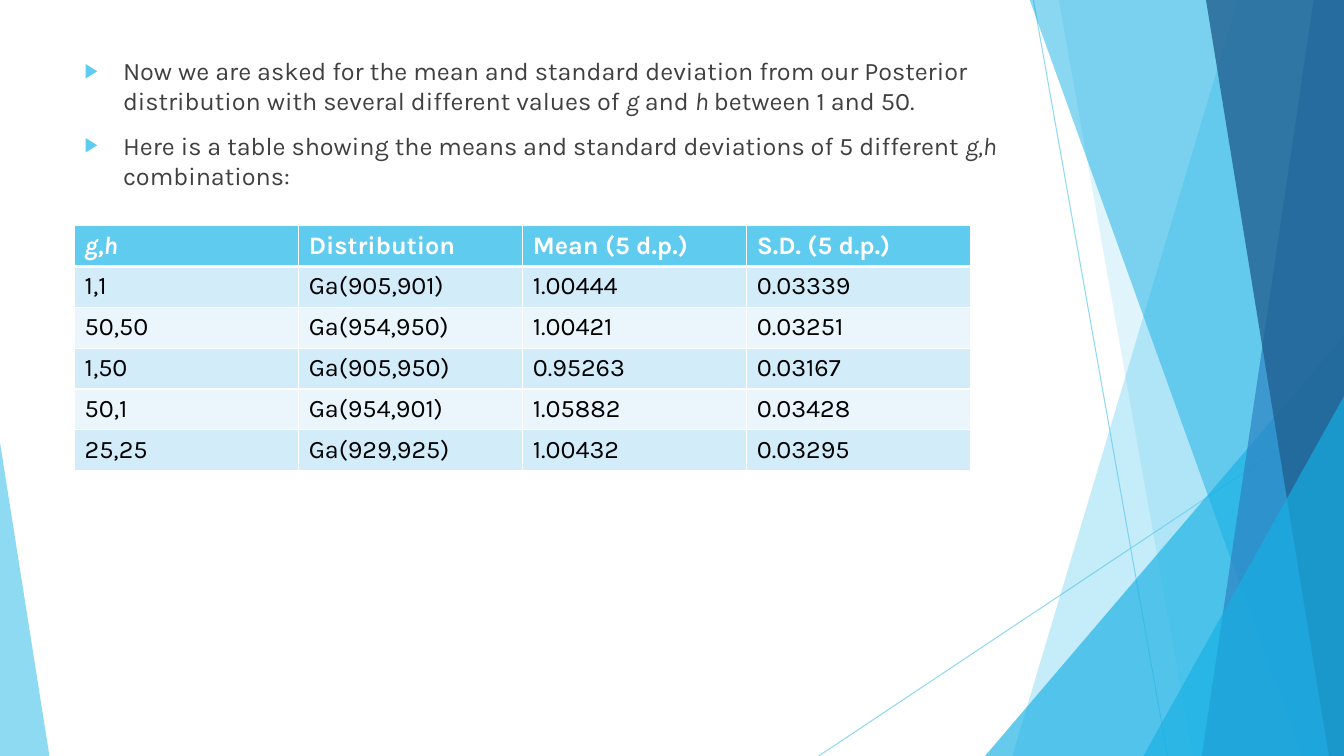
import pptx
import pptx.dml.color
import pptx.enum.shapes
import pptx.enum.text
import pptx.oxml
import pptx.oxml.ns
import pptx.util
from pptx.util import Inches

COLORS = {
    "sky": "5FCBEF", "cyan": "17B0E4", "blue": "2E83C3", "navy": "226292",
    "body": "404040", "white": "FFFFFF", "black": "000000",
    "band_dark": "D2ECF9", "band_light": "EAF6FC",
}
WIDTH, HEIGHT = 13.33, 7.5
NAMESPACE = 'xmlns:a="http://schemas.openxmlformats.org/drawingml/2006/main"'

BULLETS = [
    [("Now we are asked for the mean and standard deviation from our Posterior "
      "distribution with several different values of ", False),
     ("g", True), (" and ", False), ("h ", True), ("between 1 and 50.", False)],
    [("Here is a table showing the means and standard deviations of 5 different ", False),
     ("g,h", True), (" combinations:", False)],
]
RESULTS = [
    ["g,h", "Distribution", "Mean (5 d.p.)", "S.D. (5 d.p.)"],
    ["1,1", "Ga(905,901)", "1.00444", "0.03339"],
    ["50,50", "Ga(954,950)", "1.00421", "0.03251"],
    ["1,50", "Ga(905,950)", "0.95263", "0.03167"],
    ["50,1", "Ga(954,901)", "1.05882", "0.03428"],
    ["25,25", "Ga(929,925)", "1.00432", "0.03295"],
]


def rgb(name):
    return pptx.dml.color.RGBColor.from_string(COLORS[name])


def xml(markup):
    """Parse one DrawingML element written with the a: prefix."""
    tag, rest = markup.split(" ", 1)
    return pptx.oxml.parse_xml(f"{tag} {NAMESPACE} {rest}")


def set_opacity(shape, percent):
    for color in shape.element.iter(pptx.oxml.ns.qn("a:srgbClr")):
        color.append(xml(f'<a:alpha val="{percent * 1000}"/>'))


def add_text(paragraph, text, color="black", bold=False, italic=False):
    run = paragraph.add_run()
    run.text = text
    run.font.name = "Karla"
    run.font.size = pptx.util.Pt(18)
    run.font.bold = bold
    run.font.italic = italic
    run.font.color.rgb = rgb(color)


class FacetSlide:
    """A slide in the faceted blue style."""

    def __init__(self, presentation):
        self.slide = presentation.slides.add_slide(presentation.slide_layouts[1])
        self.shapes = self.slide.shapes
        title = self.shapes.title.element
        title.getparent().remove(title)

    def line(self, start, end):
        connector = self.shapes.add_connector(
            pptx.enum.shapes.MSO_CONNECTOR.STRAIGHT,
            *(Inches(value) for value in (*start, *end)))
        connector.line.width = pptx.util.Pt(0.75)
        connector.line.color.rgb = rgb("sky")
        set_opacity(connector, 70)
        connector.element.spPr.append(xml("<a:effectLst />"))

    def paint(self, shape, color, opacity):
        shape.shadow.inherit = False
        shape.line.fill.background()
        shape.fill.solid()
        shape.fill.fore_color.rgb = rgb(color)
        set_opacity(shape, opacity)

    def facet(self, top_x, bottom_x, color, opacity):
        """Fill the area between a slanted left edge and the slide's right edge."""
        top = -0.01
        corners = [(Inches(x), Inches(y)) for x, y in
                   ((top_x, top), (WIDTH, top), (WIDTH, HEIGHT), (bottom_x, HEIGHT))]
        builder = self.shapes.build_freeform(*corners[0], scale=1.0)
        builder.add_line_segments(corners[1:], close=True)
        self.paint(builder.convert_to_shape(), color, opacity)

    def triangle(self, left, top, width, apex, color, opacity):
        """Stand a triangle on the slide's bottom edge; apex is 0 (left) to 1 (right)."""
        shape = self.shapes.add_shape(
            pptx.enum.shapes.MSO_SHAPE.ISOSCELES_TRIANGLE,
            Inches(left), Inches(top), Inches(width), Inches(HEIGHT - top))
        shape.adjustments[0] = apex
        self.paint(shape, color, opacity)

    def bullets(self, items, left, top, width, height):
        body = self.slide.placeholders[1]
        body.left, body.top = Inches(left), Inches(top)
        body.width, body.height = Inches(width), Inches(height)
        body.element.getparent().append(body.element)
        frame = body.text_frame
        frame.auto_size = pptx.enum.text.MSO_AUTO_SIZE.NONE
        for index, runs in enumerate(items):
            paragraph = frame.add_paragraph() if index else frame.paragraphs[0]
            for text, italic in runs:
                add_text(paragraph, text, color="body", italic=italic)
            properties = paragraph._p.get_or_add_pPr()
            properties.set("marL", str(Inches(0.38)))
            properties.set("indent", str(-Inches(0.38)))
            properties.append(xml(
                f'<a:buClr ><a:srgbClr val="{COLORS["sky"]}"/></a:buClr>'))
            properties.append(xml('<a:buSzPct val="80000"/>'))
            properties.append(xml('<a:buChar char="▶"/>'))
            paragraph.space_before = pptx.util.Pt(10)

    def borders(self, cell, **widths):
        properties = cell._tc.get_or_add_tcPr()
        for index, side in enumerate("LRTB"):
            width = pptx.util.Pt(widths.get(side, 1))
            properties.insert(index, xml(
                f'<a:ln{side} w="{width}"><a:solidFill>'
                f'<a:srgbClr val="{COLORS["white"]}"/></a:solidFill></a:ln{side}>'))

    def table(self, rows, left, top, width, height):
        table = self.shapes.add_table(
            len(rows), len(rows[0]),
            Inches(left), Inches(top), Inches(width), Inches(height)).table
        for r, values in enumerate(rows):
            header = r == 0
            band = "sky" if header else ("band_light", "band_dark")[r % 2]
            for c, value in enumerate(values):
                cell = table.cell(r, c)
                cell.fill.solid()
                cell.fill.fore_color.rgb = rgb(band)
                add_text(cell.text_frame.paragraphs[0], value,
                         color="white" if header else "black",
                         bold=header, italic=header and c == 0)
                self.borders(cell, T=3 if r == 1 else 1, B=3 if header else 1)


def main():
    presentation = pptx.Presentation()
    presentation.slide_width = Inches(WIDTH)
    presentation.slide_height = Inches(HEIGHT)
    page = FacetSlide(presentation)

    page.line((10.25, 0), (11.58, HEIGHT))
    page.line((WIDTH, 4.03), (8.12, HEIGHT))
    page.facet(12.28, 10.04, "sky", 36)
    page.facet(10.5, 11.83, "sky", 20)
    page.triangle(9.77, 3.33, 3.56, 1, "cyan", 66)
    page.facet(10.21, 12.91, "cyan", 50)
    page.facet(13.03, 11.92, "blue", 70)
    page.facet(11.96, 13.18, "navy", 80)
    page.triangle(11.34, 3.93, 1.99, 1, "cyan", 66)
    page.triangle(0, 4.39, 0.49, 0, "sky", 70)

    page.bullets(BULLETS, 0.74, 0.5, 9.4, 6.1)
    page.table(RESULTS, 0.74, 2.24, 8.89, 2.43)
    presentation.save("out.pptx")


if __name__ == "__main__":
    main()
